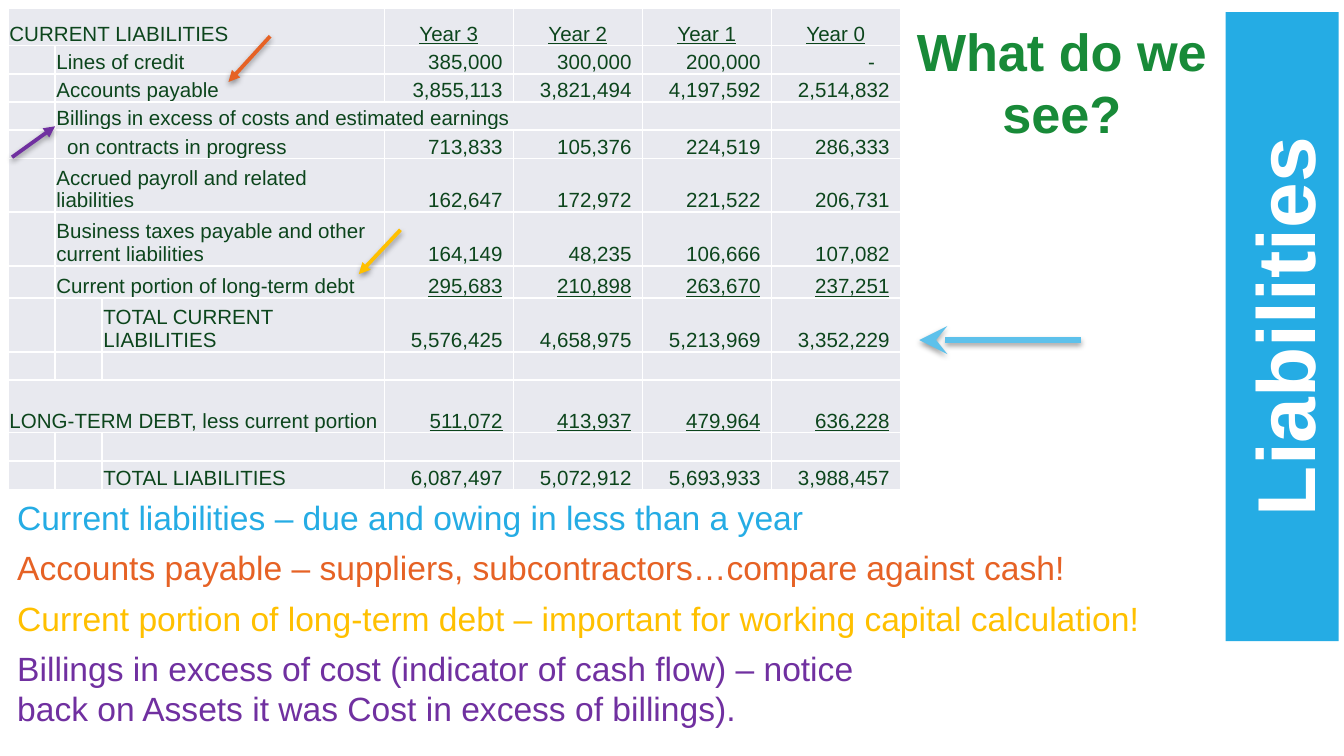
from dataclasses import dataclass

from lxml import etree
from pptx import Presentation
from pptx.dml.color import RGBColor
from pptx.enum.shapes import MSO_CONNECTOR, MSO_SHAPE
from pptx.enum.text import MSO_ANCHOR, MSO_AUTO_SIZE, PP_ALIGN
from pptx.oxml import parse_xml
from pptx.oxml.ns import nsdecls, qn
from pptx.util import Inches, Pt


@dataclass(frozen=True)
class Theme:
    font: str = "Arial"
    white: str = "FFFFFF"
    blue: str = "25ACE4"
    light_blue: str = "5DC1EB"
    green: str = "188A38"
    dark_green: str = "0C451C"
    orange: str = "E66225"
    yellow: str = "FFC000"
    purple: str = "7030A0"
    cell: str = "E8E9EF"
    banner_size: int = 44
    title_size: int = 28
    note_size: int = 18
    table_size: int = 11


@dataclass(frozen=True)
class Row:
    height: float
    label: str = ""
    level: int = 0
    last_label_column: int = 2
    values: tuple = ()
    indent: float = 0.01
    underlined: bool = False


THEME = Theme()
COLUMNS = [0.35, 0.35, 2.1] + [0.96] * 4
FIRST_YEAR = 3
YEARS = ("Year 3", "Year 2", "Year 1", "Year 0")
ROWS = [
    Row(0.28, "CURRENT LIABILITIES", values=YEARS, underlined=True),
    Row(0.21, "Lines of credit", 1, values=("385,000", "300,000", "200,000", "-")),
    Row(0.21, "Accounts payable", 1,
        values=("3,855,113", "3,821,494", "4,197,592", "2,514,832")),
    Row(0.21, "Billings in excess of costs and estimated earnings", 1, 4),
    Row(0.21, "on contracts in progress", 1, indent=0.09,
        values=("713,833", "105,376", "224,519", "286,333")),
    Row(0.4, "Accrued payroll and related liabilities", 1,
        values=("162,647", "172,972", "221,522", "206,731")),
    Row(0.4, "Business taxes payable and other current liabilities", 1,
        values=("164,149", "48,235", "106,666", "107,082")),
    Row(0.24, "Current portion of long-term debt", 1, underlined=True,
        values=("295,683", "210,898", "263,670", "237,251")),
    Row(0.4, "TOTAL CURRENT LIABILITIES", 2,
        values=("5,576,425", "4,658,975", "5,213,969", "3,352,229")),
    Row(0.21),
    Row(0.39, "LONG-TERM DEBT, less current portion", underlined=True,
        values=("511,072", "413,937", "479,964", "636,228")),
    Row(0.21),
    Row(0.22, "TOTAL LIABILITIES", 2,
        values=("6,087,497", "5,072,912", "5,693,933", "3,988,457")),
]
NOTES = [
    (3.65, 8.31, 0.4, THEME.blue,
     "Current liabilities – due and owing in less than a year"),
    (4.02, 8.59, 0.4, THEME.orange,
     "Accounts payable – suppliers, subcontractors…compare against cash!"),
    (4.4, 8.95, 0.4, THEME.yellow,
     "Current portion of long-term debt – important for working capital calculation!"),
    (4.77, 6.79, 0.71, THEME.purple,
     "Billings in excess of cost (indicator of cash flow) – notice back on Assets "
     "it was Cost in excess of billings)."),
]
ARROWS = [
    ((8.04, 2.53), (6.84, 2.53), THEME.light_blue, 3, "stealth", "lg"),
    ((2.01, 0.27), (1.7, 0.61), THEME.orange, 2, "triangle", "med"),
    ((2.98, 1.71), (2.67, 2.04), THEME.yellow, 2, "triangle", "med"),
    ((0.09, 1.17), (0.41, 0.94), THEME.purple, 2, "triangle", "med"),
]


def write(frame, text, *, size, color, bold=False, underline=False, align=PP_ALIGN.LEFT):
    para = frame.paragraphs[0]
    para.alignment = align
    span = para.add_run()
    span.text = text
    font = span.font
    font.name, font.size, font.bold = THEME.font, Pt(size), bold
    font.underline = underline
    font.color.rgb = RGBColor.from_string(color)


class SlideBuilder:
    def __init__(self, slide, theme):
        self.slide = slide
        self.theme = theme

    def title(self, text, left, top, width, height):
        box = self.slide.shapes.title
        box.left, box.top = Inches(left), Inches(top)
        box.width, box.height = Inches(width), Inches(height)
        frame = box.text_frame
        frame.word_wrap = True
        frame.auto_size = MSO_AUTO_SIZE.SHAPE_TO_FIT_TEXT
        frame.vertical_anchor = MSO_ANCHOR.TOP
        write(frame, text, size=self.theme.title_size, color=self.theme.green,
              bold=True, align=PP_ALIGN.CENTER)

    def banner(self, text, left, top, width, height):
        box = self.slide.shapes.add_shape(
            MSO_SHAPE.RECTANGLE, Inches(left), Inches(top), Inches(width), Inches(height))
        box.rotation = 270
        box.shadow.inherit = False
        box.fill.solid()
        box.fill.fore_color.rgb = RGBColor.from_string(self.theme.blue)
        box.line.fill.background()
        write(box.text_frame, text, size=self.theme.banner_size, color=self.theme.white,
              bold=True, align=PP_ALIGN.CENTER)

    def note(self, text, color, left, top, width, height):
        box = self.slide.shapes.add_textbox(
            Inches(left), Inches(top), Inches(width), Inches(height))
        frame = box.text_frame
        frame.word_wrap = True
        frame.auto_size = MSO_AUTO_SIZE.SHAPE_TO_FIT_TEXT
        write(frame, text, size=self.theme.note_size, color=color)

    def arrow(self, start, end, color, weight, head, head_size):
        line = self.slide.shapes.add_connector(
            MSO_CONNECTOR.STRAIGHT, *(Inches(value) for value in start + end))
        line.line.color.rgb = RGBColor.from_string(color)
        line.line.width = Pt(weight)
        etree.SubElement(line.line._get_or_add_ln(), qn("a:tailEnd"),
                         type=head, w=head_size, len=head_size)
        line._element.spPr.append(parse_xml(
            f'<a:effectLst {nsdecls("a")}><a:outerShdw blurRad="{Pt(3.1)}" '
            f'dist="{Pt(1.6)}" dir="5400000" rotWithShape="0"><a:srgbClr val="000000">'
            '<a:alpha val="38000"/></a:srgbClr></a:outerShdw></a:effectLst>'))

    def table(self, rows, columns, left, top):
        height = sum(row.height for row in rows)
        table = self.slide.shapes.add_table(
            len(rows), len(columns), Inches(left), Inches(top),
            Inches(sum(columns)), Inches(height)).table
        table.first_row = table.horz_banding = False
        for column, width in zip(table.columns, columns):
            column.width = Inches(width)
        for index, row in enumerate(rows):
            table.rows[index].height = Inches(row.height)
            cells = [table.cell(index, column) for column in range(len(columns))]
            for cell in cells:
                self.style_cell(cell)
            if row.label:
                self.label(cells, row)
            for cell, value in zip(cells[FIRST_YEAR:], row.values):
                self.value(cell, value, row.underlined)

    def style_cell(self, cell):
        cell.margin_left = cell.margin_right = cell.margin_top = Inches(0.01)
        cell.margin_bottom = 0
        cell.vertical_anchor = MSO_ANCHOR.BOTTOM
        properties = cell._tc.get_or_add_tcPr()
        for side in ("lnL", "lnR", "lnT", "lnB"):
            properties.append(parse_xml(
                f'<a:{side} {nsdecls("a")} w="{Pt(1)}"><a:solidFill>'
                f'<a:srgbClr val="{self.theme.white}"/></a:solidFill></a:{side}>'))
        cell.fill.solid()
        cell.fill.fore_color.rgb = RGBColor.from_string(self.theme.cell)
        end = cell.text_frame.paragraphs[0]._p.get_or_add_endParaRPr()
        end.set("sz", str(self.theme.table_size * 100))

    def label(self, cells, row):
        cell = cells[row.level]
        if row.level < row.last_label_column:
            cell.merge(cells[row.last_label_column])
        cell.margin_left = Inches(row.indent)
        write(cell.text_frame, row.label, size=self.theme.table_size,
              color=self.theme.dark_green)

    def value(self, cell, text, underlined):
        """Centre the year headings and right-align the figures."""
        align = PP_ALIGN.CENTER
        if text not in YEARS:
            align = PP_ALIGN.RIGHT
            cell.margin_right = Inches(0.19 if text == "-" else 0.08)
        write(cell.text_frame, text, size=self.theme.table_size,
              color=self.theme.dark_green, underline=underlined, align=align)


def main():
    deck = Presentation()
    deck.slide_width = Inches(10)
    deck.slide_height = deck.slide_width * 9 // 16
    page = SlideBuilder(deck.slides.add_slide(deck.slide_layouts[5]), THEME)
    page.banner("Liabilities", 7.2, 2.01, 4.68, 0.84)
    page.title("What do we see?", 6.67, 0.09, 2.46, 1.04)
    for top, width, height, color, text in NOTES:
        page.note(text, color, 0.03, top, width, height)
    page.table(ROWS, COLUMNS, 0.06, 0.06)
    for arrow in ARROWS:
        page.arrow(*arrow)
    deck.save("out.pptx")


if __name__ == "__main__":
    main()
